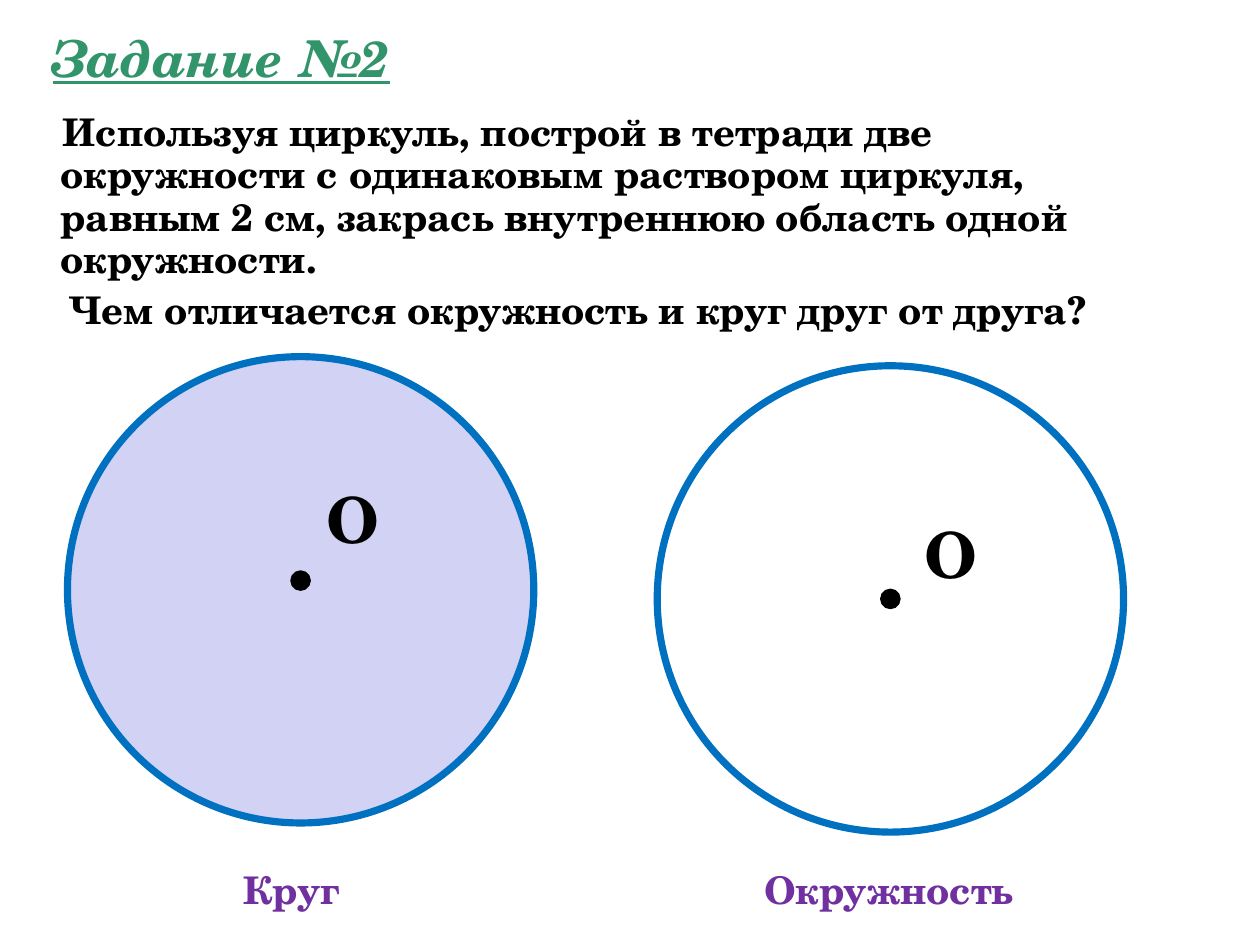
from pptx import Presentation
from pptx.dml.color import RGBColor
from pptx.enum.shapes import MSO_SHAPE
from pptx.enum.text import MSO_ANCHOR, MSO_AUTO_SIZE, PP_ALIGN
from pptx.util import Cm, Inches, Pt
from lxml import etree

OVAL = MSO_SHAPE.OVAL
TOP = MSO_ANCHOR.TOP
NO_FIT = MSO_AUTO_SIZE.NONE
LEFT, CENTER = PP_ALIGN.LEFT, PP_ALIGN.CENTER

FONT = "TeX Gyre Schola"
BLACK, GREEN, PURPLE, BLUE, LAVENDER = "000000", "32946A", "7030A0", "0070C0", "D2D2F4"
DIAMETER, DOT = 4.08, 0.17
DRAWING = "http://schemas.openxmlformats.org/drawingml/2006/main"

deck = Presentation()
deck.slide_width, deck.slide_height = Cm(28), Cm(21)
page = deck.slides.add_slide(deck.slide_layouts[1])


def write(box, area, text, size, color, align=LEFT):
    box.left, box.top, box.width, box.height = map(Inches, area)
    frame = box.text_frame
    frame.word_wrap = True
    frame.auto_size = NO_FIT
    frame.vertical_anchor = TOP
    para = frame.paragraphs[0]
    para.alignment = align
    para.line_spacing = 0.93
    para.space_before = Pt(0)
    span = para.add_run()
    span.text = text
    span.font.name = FONT
    span.font.size = Pt(size)
    span.font.bold = True
    span.font.color.rgb = RGBColor.from_string(color)
    return span


def draw_circle(center_x, center_y, diameter, fill, line, weight):
    left, top = center_x - diameter / 2, center_y - diameter / 2
    circle = page.shapes.add_shape(
        OVAL, Inches(left), Inches(top), Inches(diameter), Inches(diameter))
    circle.shadow.inherit = False
    if fill:
        circle.fill.solid()
        circle.fill.fore_color.rgb = RGBColor.from_string(fill)
    else:
        circle.fill.background()
    circle.line.color.rgb = RGBColor.from_string(line)
    circle.line.width = Pt(weight)


title = write(page.shapes.title, (0.36, 0.23, 4.84, 0.6), "Задание №2", 32, GREEN)
title.font.italic = True
title.font.underline = True

task = page.placeholders[1]
properties = task.text_frame.paragraphs[0]._p.get_or_add_pPr()
properties.set("marL", "0")
properties.set("indent", str(Inches(0.02)))
etree.SubElement(properties, f"{{{DRAWING}}}buNone")
write(task, (0.43, 0.93, 9.3, 1.98),
      "Используя циркуль, построй в тетради две окружности с одинаковым "
      "раствором циркуля, равным 2 см, закрась внутреннюю область одной окружности.",
      24, BLACK)

question = page.shapes.add_textbox(0, 0, 0, 0)
write(question, (0.51, 2.49, 10.16, 0.48),
      "Чем отличается окружность и круг друг от друга?", 24, BLACK)

figures = [
    ("Круг", 2.63, 5.16, 5.08, LAVENDER, (2.7, 4.21), (1.68, 1.74)),
    ("Окружность", 7.79, 5.24, 5.24, None, (7.93, 4.52), (5.43, 4.69)),
]
for name, center_x, center_y, dot_y, fill, letter_at, (name_left, name_width) in figures:
    draw_circle(center_x, center_y, DIAMETER, fill, BLUE, 4.5)
    draw_circle(center_x, dot_y, DOT, BLACK, BLACK, 0.75)
    letter = page.shapes.add_textbox(0, 0, 0, 0)
    write(letter, (*letter_at, 0.78, 0.74), "O", 40, BLACK, CENTER)
    caption = page.shapes.add_textbox(0, 0, 0, 0)
    write(caption, (name_left, 7.57, name_width, 0.49), name, 24, PURPLE, CENTER)

deck.save("out.pptx")
